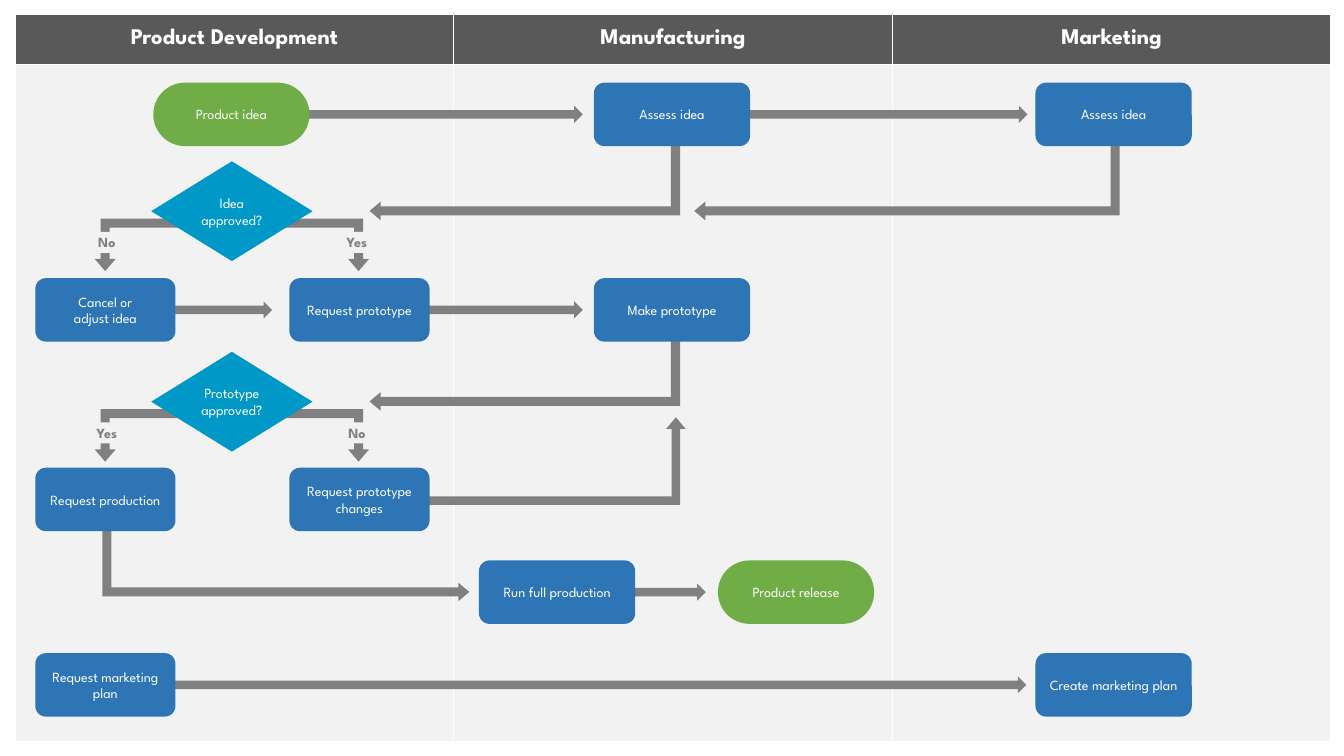
from lxml.etree import SubElement
from pptx import Presentation
from pptx.dml.color import RGBColor
from pptx.enum.shapes import MSO_SHAPE as Preset
from pptx.enum.text import MSO_ANCHOR as Anchor, PP_ALIGN as Align
from pptx.oxml.ns import qn
from pptx.util import Inches, Pt

FONT = "League Spartan"
COLOURS = {
    "white": "FFFFFF", "header": "595959", "lane": "F2F2F2", "arrow": "808080",
    "step": "2E75B6", "terminal": "70AD47", "decision": "0098C6",
}
LANES = ["Product Development", "Manufacturing", "Marketing"]
LANE_WIDTH, HEADER_HEIGHT, LANE_HEIGHT = 4.35, 0.5, 6.72

# Box columns and rows, in inches
NARROW, WIDE, BOX_HEIGHT = 1.39, 1.55, 0.63
LEFT, RIGHT, MIDDLE, FAR = 0.35, 2.87, 5.89, 10.27
IDEA, PROTOTYPE, REVIEW, PRODUCTION, PLAN = 0.82, 2.76, 4.64, 5.56, 6.48

STEPS = [
    ("Assess idea", MIDDLE, IDEA, WIDE),
    ("Assess idea", FAR, IDEA, WIDE),
    ("Cancel or\nadjust idea", LEFT, PROTOTYPE, NARROW),
    ("Request prototype", RIGHT, PROTOTYPE, NARROW),
    ("Make prototype", MIDDLE, PROTOTYPE, WIDE),
    ("Request production", LEFT, REVIEW, NARROW),
    ("Request prototype changes", RIGHT, REVIEW, NARROW),
    ("Run full production", 4.75, PRODUCTION, WIDE),
    ("Request marketing plan", LEFT, PLAN, NARROW),
    ("Create marketing plan", FAR, PLAN, WIDE),
]
TERMINALS = [("Product idea", 1.52, IDEA), ("Product release", 7.12, PRODUCTION)]
# Wording, top, left answer, right answer
DECISIONS = [
    ("Idea approved?", 1.6, "No", "Yes"),
    ("Prototype approved?", 3.49, "Yes", "No"),
]
# Left, row, length
STRAIGHT_ARROWS = [
    (2.93, IDEA, 2.85), (7.34, IDEA, 2.85),
    (1.67, PROTOTYPE, 1.03), (4.13, PROTOTYPE, 1.65),
    (5.97, PRODUCTION, 1.03), (1.65, PLAN, 8.53),
]
# Left, top, width, height, rotation, mirrored, adjustments
LONG_BEND = (0.109, 0.111, 0.132)
BENT_ARROWS = [
    (4.79, 0.23, 0.83, 3.08, 270, True, LONG_BEND),
    (8.58, -0.34, 0.83, 4.22, 270, True, LONG_BEND),
    (4.79, 2.12, 0.83, 3.08, 270, True, LONG_BEND),
    (2.42, 3.73, 0.83, 3.64, 90, False, LONG_BEND),
    (4.12, 4.14, 2.68, 0.87, 0, False, (0.099, 0.111, 0.132)),
]
BRANCH_BEND = (0.169, 0.198, 0.233)


def colour(name):
    return RGBColor.from_string(COLOURS[name])


def write(frame, text, size, ink, bold=False):
    para = frame.paragraphs[0]
    para.text = text
    para.alignment = Align.CENTER
    para.font.name, para.font.size, para.font.bold = FONT, Pt(size), bold
    para.font.color.rgb = colour(ink)


def add_figure(page, preset, left, top, width, height, fill, adjustments=()):
    figure = page.shapes.add_shape(
        preset, Inches(left), Inches(top), Inches(width), Inches(height))
    figure.shadow.inherit = False
    figure.fill.solid()
    figure.fill.fore_color.rgb = colour(fill)
    figure.line.fill.background()
    for index, value in enumerate(adjustments):
        figure.adjustments[index] = value
    return figure


def add_box(page, text, left, top, width, fill, rounding):
    box = add_figure(page, Preset.ROUNDED_RECTANGLE, left, top, width,
                     BOX_HEIGHT, fill, [rounding])
    write(box.text_frame, text, 10, "white")


def add_bent_arrow(page, left, top, width, height, rotation, mirrored, bend):
    arrow = add_figure(page, Preset.BENT_UP_ARROW, left, top, width, height,
                       "arrow", bend)
    arrow.rotation = rotation
    if mirrored:
        arrow.element.spPr.find(qn("a:xfrm")).set("flipH", "1")


def add_answer(page, text, left, top):
    label = add_figure(page, Preset.RECTANGLE, left, top, 0.44, 0.21, "lane")
    frame = label.text_frame
    frame.margin_left = frame.margin_right = 0
    frame.margin_top = frame.margin_bottom = Inches(0.02)
    frame.vertical_anchor = Anchor.TOP
    write(frame, text, 10, "arrow", bold=True)


def add_decision(page, text, top, left_answer, right_answer):
    for left, mirrored in ((0.94, False), (2.63, True)):
        add_bent_arrow(page, left, top + 0.57, 1.03, 0.52, 180, mirrored,
                       BRANCH_BEND)
    diamond = add_figure(page, Preset.DIAMOND, 1.5, top, 1.6, 0.99, "decision")
    frame = diamond.text_frame
    frame.margin_left = frame.margin_right = 0
    frame.margin_top = frame.margin_bottom = 0
    write(frame, text, 10, "white")
    add_answer(page, left_answer, 0.84, top + 0.7)
    add_answer(page, right_answer, 3.32, top + 0.7)


def format_cell(cell, fill):
    properties = cell._tc.get_or_add_tcPr()
    for side in ("a:lnL", "a:lnR", "a:lnT", "a:lnB"):
        border = SubElement(properties, qn(side), w=str(Pt(0.75)))
        paint = SubElement(border, qn("a:solidFill"))
        SubElement(paint, qn("a:srgbClr"), val=COLOURS["white"])
    cell.fill.solid()
    cell.fill.fore_color.rgb = colour(fill)
    cell.vertical_anchor = Anchor.MIDDLE


def add_lanes(page):
    table = page.shapes.add_table(
        2, len(LANES), Inches(0.15), Inches(0.14),
        Inches(LANE_WIDTH * len(LANES)),
        Inches(HEADER_HEIGHT + LANE_HEIGHT)).table
    table.rows[0].height = Inches(HEADER_HEIGHT)
    table.rows[1].height = Inches(LANE_HEIGHT)
    for index, name in enumerate(LANES):
        table.columns[index].width = Inches(LANE_WIDTH)
        format_cell(table.cell(0, index), "header")
        format_cell(table.cell(1, index), "lane")
        write(table.cell(0, index).text_frame, name, 16, "white", bold=True)


def main():
    deck = Presentation()
    deck.slide_width, deck.slide_height = Inches(13.33), Inches(7.5)
    page = deck.slides.add_slide(deck.slide_layouts[6])

    # Swimlanes
    add_lanes(page)

    # Arrows, beneath the boxes they join
    for left, row, length in STRAIGHT_ARROWS:
        add_figure(page, Preset.RIGHT_ARROW, left, row + 0.23, length, 0.17,
                   "arrow")
    for arrow in BENT_ARROWS:
        add_bent_arrow(page, *arrow)

    # Decisions, steps and end points
    for decision in DECISIONS:
        add_decision(page, *decision)
    for step in STEPS:
        add_box(page, *step, "step", 0.167)
    for text, left, top in TERMINALS:
        add_box(page, text, left, top, WIDE, "terminal", 0.5)

    deck.save("out.pptx")


if __name__ == "__main__":
    main()
